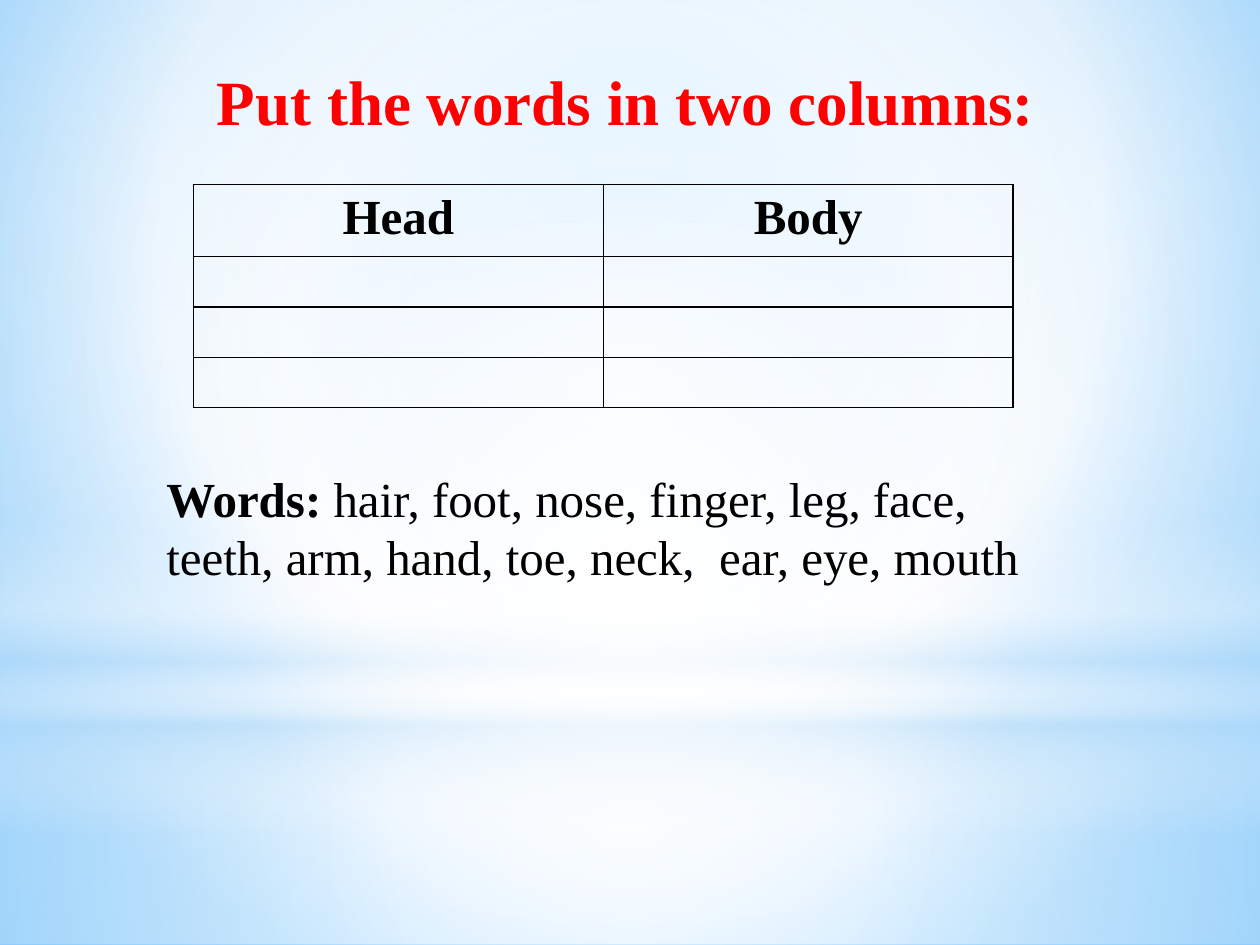
import pptx
import pptx.util
import pptx.dml.color
import pptx.enum.shapes
import pptx.enum.text
import pptx.oxml
import pptx.oxml.ns

Pt = pptx.util.Pt
KIND = pptx.enum.shapes.MSO_SHAPE
CENTER = pptx.enum.text.PP_ALIGN.CENTER
LEFT = pptx.enum.text.PP_ALIGN.LEFT
HUES = {"red": "FF0000", "black": "000000", "white": "FFFFFF",
        "pale": "B4DCFA", "sky": "9ED5FF", "blue": "5BB9FF"}
MIDDLE = '<a:path path="circle"><a:fillToRect l="50000" t="50000" r="50000" b="50000"/></a:path>'
GLOW = MIDDLE
SPACE = pptx.oxml.ns.nsdecls("a")


def focus(left, top, right, base):
    return (f'<a:path path="circle"><a:fillToRect l="{left}000" t="{top}000" '
            f'r="{right}000" b="{base}000"/></a:path>')


class Deck:
    def __init__(self, wide, high):
        self.show = pptx.Presentation()
        self.show.slide_width, self.show.slide_height = Pt(wide), Pt(high)
        self.slide = self.show.slides.add_slide(self.show.slide_layouts[6])
        self.face = "Times New Roman"

    def blend(self, fill, root, stops, shade):
        fill.gradient()
        old = root.find(".//" + pptx.oxml.ns.qn("a:gradFill"))
        marks = "".join(
            f'<a:gs pos="{pos}000"><a:srgbClr val="{HUES[hue]}">'
            f'<a:alpha val="{alpha}000"/></a:srgbClr></a:gs>'
            for pos, hue, alpha in stops)
        shade = shade.replace("a:path>", "a:path>")
        new = pptx.oxml.parse_xml(
            f'<a:gradFill {SPACE} rotWithShape="1"><a:gsLst>{marks}</a:gsLst>{shade}</a:gradFill>')
        old.getparent().replace(old, new)

    def back(self, stops, shade):
        self.blend(self.slide.background.fill, self.slide.element, stops, shade)

    def layer(self, kind, top, high, stops, shade):
        shape = self.slide.shapes.add_shape(
            kind, 0, Pt(top), self.show.slide_width, Pt(high))
        shape.shadow.inherit = False
        shape.line.fill.background()
        self.blend(shape.fill, shape.element, stops, shade)

    def font(self, font, size, hue, bold=None):
        font.name, font.size, font.bold = self.face, Pt(size), bold
        font.color.rgb = pptx.dml.color.RGBColor.from_string(HUES[hue])

    def text(self, box, parts, size, hue, align=LEFT, wrap=True):
        frame = self.slide.shapes.add_textbox(*map(Pt, box)).text_frame
        frame.word_wrap = wrap
        frame.auto_size = pptx.enum.text.MSO_AUTO_SIZE.SHAPE_TO_FIT_TEXT
        para = frame.paragraphs[0]
        para.alignment = align
        self.font(para.font, size, hue)
        for words, bold in parts:
            run = para.add_run()
            run.text = words
            self.font(run.font, size, hue, bold)

    def edge(self, cell):
        props = cell._tc.get_or_add_tcPr()
        for spot, side in enumerate(("lnL", "lnR", "lnT", "lnB")):
            props.insert(spot, pptx.oxml.parse_xml(
                f'<a:{side} {SPACE} w="12700"><a:solidFill>'
                f'<a:srgbClr val="{HUES["black"]}"/></a:solidFill></a:{side}>'))

    def table(self, left, top, wide, heads, rows):
        grid = self.slide.shapes.add_table(
            len(rows), len(heads), Pt(left), Pt(top), Pt(wide), Pt(sum(rows))).table
        grid.first_row = grid.horz_banding = False
        for row, high in zip(grid.rows, rows):
            row.height = Pt(high)
        for cell in grid.iter_cells():
            cell.fill.background()
            self.edge(cell)
        for spot, head in enumerate(heads):
            cell = grid.cell(0, spot)
            cell.text = head
            para = cell.text_frame.paragraphs[0]
            para.alignment = CENTER
            self.font(para.runs[0].font, 28, "black", True)


def main():
    deck = Deck(720, 540)
    deck.back([(0, "sky", 100), (60, "white", 100), (100, "blue", 100)],
              focus(20, 10, 20, 60))
    deck.layer(KIND.RECTANGLE, 402, 138,
               [(0, "white", 91), (37, "white", 76), (100, "pale", 79)], GLOW)
    deck.layer(KIND.RECTANGLE, 0, 402,
               [(0, "white", 89), (48, "white", 62), (100, "pale", 79)], GLOW)
    deck.layer(KIND.RECTANGLE, 297, 180,
               [(0, "white", 0), (29, "white", 30), (45, "pale", 40),
                (55, "white", 26), (65, "pale", 60), (100, "white", 0)],
               '<a:lin ang="5400000" scaled="0"/>')
    deck.layer(KIND.OVAL, 126, 402, [(0, "white", 100), (56, "white", 0)], GLOW)
    deck.text((114.5, 32, 495, 51), [("Put the words in two columns: ", True)],
              36, "red", CENTER, False)
    deck.table(110.5, 105.5, 468.5, ["Head", "Body"], [41] + [28.8] * 3)
    deck.text((88, 264, 521, 75),
              [("Words: ", True),
               ("hair, foot, nose, finger, leg, face, teeth, arm, hand, toe, "
                "neck,  ear, eye, mouth", False)], 28, "black")
    deck.show.save("out.pptx")


if __name__ == "__main__":
    main()
